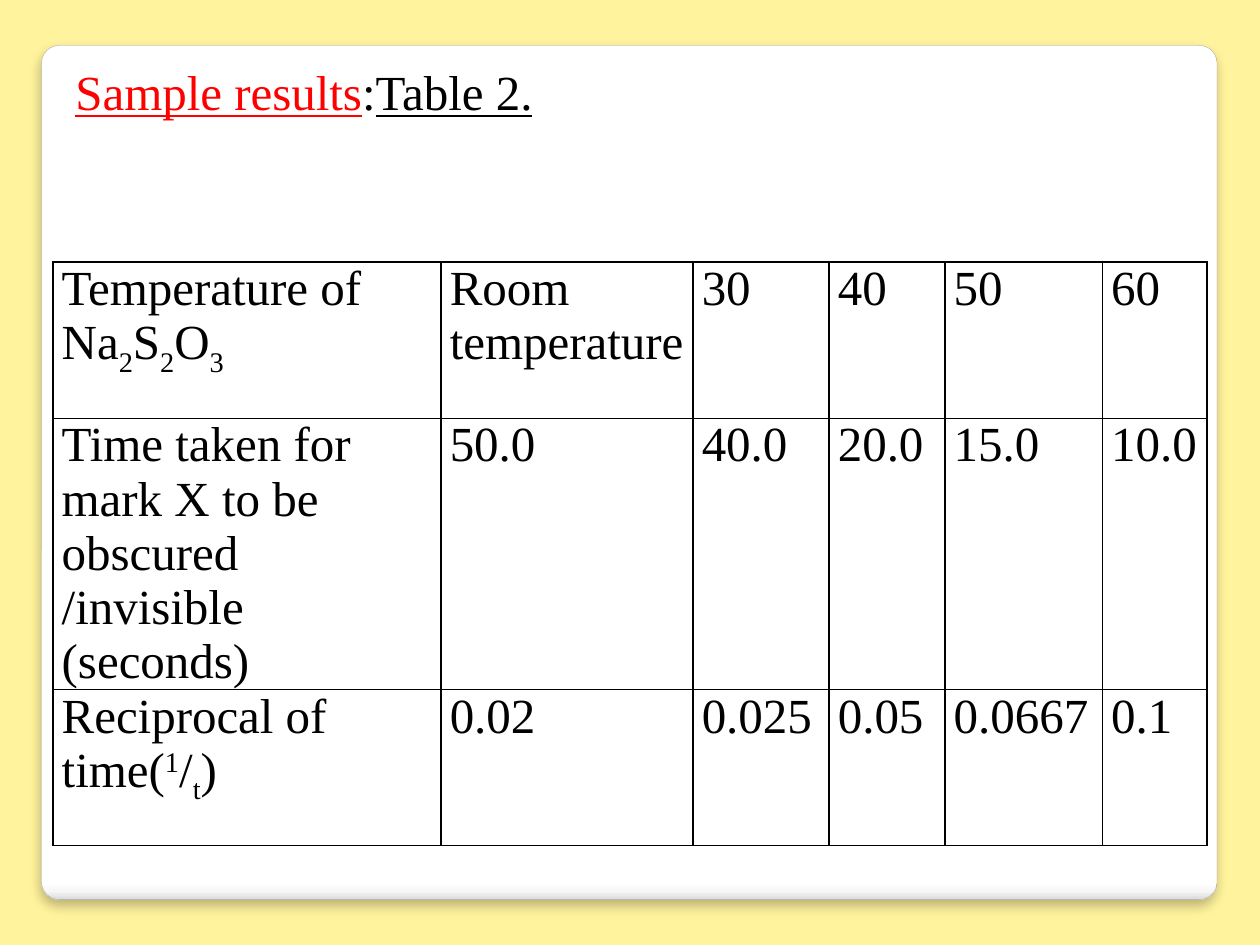
from dataclasses import dataclass

from lxml.etree import SubElement
from pptx import Presentation
from pptx.dml.color import RGBColor as RGB
from pptx.enum.shapes import MSO_SHAPE as Kind
from pptx.enum.text import MSO_ANCHOR as Anchor
from pptx.oxml.ns import qn
from pptx.util import Inches, Pt

HUES = {
    "back": "FFF39D", "edge": "A4A4A4", "red": "FF0000", "ink": "000000",
    "white": "FFFFFF", "mist": "F7F7F7", "grey": "DADADA",
}
FADE = [(0, "white"), (98, "white"), (99, "mist"), (100, "grey")]
WIDTHS = [3.08, 2, 1.08, 0.92, 1.25, 0.83]
HEIGHTS = [1.24, 1.86, 1.24]


@dataclass
class Bit:
    text: str
    base: int = 0
    hue: str = "ink"
    under: bool = False


def sub(text: str) -> Bit:
    return Bit(text, base=-25)


TITLE = [Bit("Sample results", hue="red", under=True), Bit(":"), Bit("Table 2.", under=True)]
SALT = [Bit("Temperature of Na"), sub("2"), Bit("S"), sub("2"), Bit("O"), sub("3")]
RATE = [Bit("Reciprocal of time("), Bit("1", base=30), Bit("/"), sub("t"), Bit(")")]
TIME = [Bit("Time taken for mark X to be obscured /invisible (seconds)")]
ROWS = [
    (SALT, ["Room temperature", "30", "40", "50", "60"]),
    (TIME, ["50.0", "40.0", "20.0", "15.0", "10.0"]),
    (RATE, ["0.02", "0.025", "0.05", "0.0667", "0.1"]),
]


def node(home, tag: str, **attrs):
    return SubElement(home, qn(tag), {key: str(val) for key, val in attrs.items()})


def tint(home, hue: str):
    return node(home, "a:srgbClr", val=HUES[hue])


def write(para, text: str, *, base: int = 0, hue: str = "ink", under: bool = False) -> None:
    run = para.add_run()
    run.text = text
    font = run.font
    font.name, font.size, font.underline = "Times New Roman", Pt(28), under
    font.color.rgb = RGB.from_string(HUES[hue])
    if base:
        font._element.set("baseline", str(base * 1000))


def fill_line(para, bits: list[Bit]) -> None:
    for bit in bits:
        write(para, bit.text, base=bit.base, hue=bit.hue, under=bit.under)


def add_panel(slide) -> None:
    panel = slide.shapes.add_shape(
        Kind.ROUNDED_RECTANGLE, Inches(0.33), Inches(0.36), Inches(9.33), Inches(6.78))
    panel.adjustments[0] = 0.021
    panel.line.color.rgb = RGB.from_string(HUES["edge"])
    panel.line.width = Pt(0.16)
    panel.fill.gradient()
    panel.fill.gradient_angle = 270
    props = panel._element.spPr
    stops = props.find(qn("a:gradFill")).find(qn("a:gsLst"))
    for stop in list(stops):
        stops.remove(stop)
    for place, hue in FADE:
        tint(node(stops, "a:gs", pos=place * 1000), hue)
    panel.shadow.inherit = False
    shade = node(props.find(qn("a:effectLst")), "a:outerShdw", blurRad=Pt(6),
                 dist=Pt(4), dir=90 * 60000, algn="t", rotWithShape=0)
    node(tint(shade, "ink"), "a:alpha", val=25000)


def add_title(slide) -> None:
    box = slide.shapes.add_textbox(Inches(0.5), Inches(0.44), Inches(9.5), Inches(0.71))
    box.text_frame.word_wrap = True
    fill_line(box.text_frame.paragraphs[0], TITLE)


def dress(cell, bits: list[Bit]) -> None:
    cell.margin_left = cell.margin_right = Inches(0.07)
    cell.margin_top = cell.margin_bottom = 0
    cell.vertical_anchor = Anchor.TOP
    props = cell._tc.get_or_add_tcPr()
    for side in "LRTB":
        edge = node(props, f"a:ln{side}", w=Pt(1))
        tint(node(edge, "a:solidFill"), "ink")
    cell.fill.background()
    fill_line(cell.text_frame.paragraphs[0], bits)


def add_grid(slide) -> None:
    frame = slide.shapes.add_table(
        len(HEIGHTS), len(WIDTHS), Inches(0.42), Inches(2.08),
        Inches(sum(WIDTHS)), Inches(sum(HEIGHTS)))
    grid = frame.table
    grid.first_row = grid.horz_banding = False
    for col, width in zip(grid.columns, WIDTHS):
        col.width = Inches(width)
    for row, height, (head, vals) in zip(grid.rows, HEIGHTS, ROWS):
        row.height = Inches(height)
        for cell, bits in zip(row.cells, [head, *([Bit(val)] for val in vals)]):
            dress(cell, bits)


def main() -> None:
    """Build the slide of sample results and save it."""
    deck = Presentation()
    deck.slide_width, deck.slide_height = Inches(10), Inches(7.5)
    slide = deck.slides.add_slide(deck.slide_layouts[6])
    slide.background.fill.solid()
    slide.background.fill.fore_color.rgb = RGB.from_string(HUES["back"])
    add_panel(slide)
    add_grid(slide)
    add_title(slide)
    deck.save("out.pptx")


if __name__ == "__main__":
    main()
